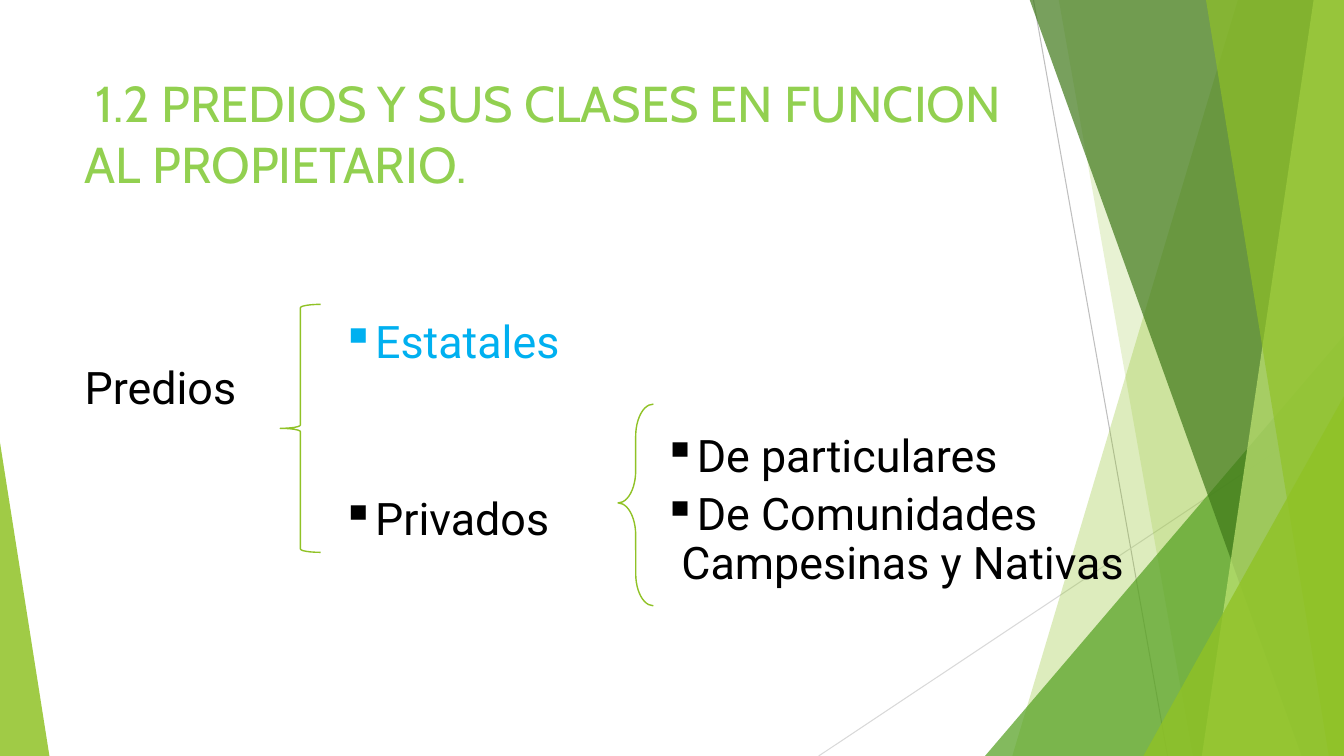
from lxml import etree
from pptx import Presentation, util as u
from pptx.dml.color import RGBColor
from pptx.enum import shapes, text
from pptx.oxml.ns import qn

PX = 9144  # EMU per px, 100 px to the inch
WIDTH, HEIGHT = 1333, 750
COLORS = {
    "lime": "90C226", "green": "54A021", "forest": "3F7819", "pale": "C0E474",
    "title": "92D050", "blue": "00B0F0", "black": "000000",
    "gray": "BFBFBF", "light_gray": "D9D9D9",
}


def px(*lengths):
    return [u.Emu(length * PX) for length in lengths]


def rgb(name):
    return RGBColor.from_string(COLORS[name])


def fill_shape(shape, color, opacity):
    shape.shadow.inherit = False
    shape.line.fill.background()
    shape.fill.solid()
    shape.fill.fore_color.rgb = rgb(color)
    color_element = shape.fill._xPr.find(qn("a:solidFill"))[0]
    etree.SubElement(color_element, qn("a:alpha"), val=str(opacity * 1000))


def add_line(slide, start, end, color):
    line = slide.shapes.add_connector(
        shapes.MSO_CONNECTOR.STRAIGHT, *px(*start), *px(*end))
    line.line.color.rgb = rgb(color)
    line.line.width = u.Pt(0.75)
    etree.SubElement(line._element.spPr, qn("a:effectLst"))


def add_band(slide, right, top_x, bottom_x, color, opacity):
    """Fill from a slanted edge to the right side, over the full height."""
    builder = slide.shapes.build_freeform(top_x, -1, scale=PX)
    builder.add_line_segments([(right, -1), (right, HEIGHT), (bottom_x, HEIGHT)])
    fill_shape(builder.convert_to_shape(), color, opacity)


def add_corner(slide, box, apex, color, opacity):
    triangle = slide.shapes.add_shape(
        shapes.MSO_SHAPE.ISOSCELES_TRIANGLE, *px(*box))
    triangle.adjustments[0] = apex
    fill_shape(triangle, color, opacity)


def add_facets(slide, box):
    left, top, width, height = box
    right, bottom = left + width, top + height

    def right_corner(corner_width, corner_height, color, opacity):
        corner = (right - corner_width, bottom - corner_height,
                  corner_width, corner_height)
        add_corner(slide, corner, 1, color, opacity)

    # Thin lines
    add_line(slide, (1025, top), (1158, bottom), "gray")
    add_line(slide, (right, 403), (812, bottom), "light_gray")
    # Overlapping facets, back to front
    add_band(slide, right, 1228, 1004, "lime", 30)
    add_band(slide, right, 1050, 1183, "lime", 20)
    right_corner(356, 417, "green", 72)
    add_band(slide, right, 1021, 1291, "forest", 70)
    add_band(slide, right, 1303, 1192, "pale", 70)
    add_band(slide, right, 1196, 1318, "lime", 65)
    right_corner(199, 357, "lime", 80)
    # Left corner
    add_corner(slide, (left, bottom - 311, 49, 311), 0, "lime", 85)


def add_text(slide, box, lines, font, size, bulleted=False):
    """Lines are (wording, colour, space before in points)."""
    frame = slide.shapes.add_textbox(*px(*box)).text_frame
    frame.word_wrap = True
    frame.vertical_anchor = text.MSO_ANCHOR.TOP
    for index, (wording, color, space) in enumerate(lines):
        paragraph = frame.paragraphs[0] if index == 0 else frame.add_paragraph()
        paragraph.space_before = u.Pt(space)
        if bulleted:
            paragraph.line_spacing = 0.9
            properties = paragraph._p.get_or_add_pPr()
            indent = 18 * PX
            properties.set("marL", str(indent))
            properties.set("indent", str(-indent))
            etree.SubElement(properties, qn("a:buChar"), char="▪")
        run = paragraph.add_run()
        run.text = wording
        run.font.name = font
        run.font.size = u.Pt(size)
        run.font.color.rgb = rgb(color)


def add_brace(slide, box, adjustments=()):
    brace = slide.shapes.add_shape(shapes.MSO_SHAPE.LEFT_BRACE, *px(*box))
    brace.shadow.inherit = False
    brace.fill.background()
    brace.line.color.rgb = rgb("lime")
    brace.line.width = u.Pt(1)
    for index, value in enumerate(adjustments):
        brace.adjustments[index] = value


def add_title(slide, box):
    title = " 1.2 PREDIOS Y SUS CLASES EN FUNCION AL PROPIETARIO."
    add_text(slide, box, [(title, "title", 0)], "Cabin", 36)


def add_classification(slide, box):
    left, top, _, _ = box
    # Root
    add_text(slide, (left, top + 50, 190, 62),
             [("Predios", "black", 0)], "Roboto", 32)
    # Owners
    add_brace(slide, (left + 204, top, 40, 246))
    add_text(slide, (left + 255, top + 10, 256, 269),
             [("Estatales", "blue", 0), ("Privados", "black", 92)],
             "Roboto", 32, bulleted=True)
    # Private owners
    add_brace(slide, (left + 539, top + 99, 35, 200), (0.91, 0.49))
    add_text(slide, (left + 574, top + 123, 552, 212),
             [("De particulares", "black", 0),
              ("De Comunidades Campesinas y Nativas", "black", 7.3)],
             "Roboto", 32, bulleted=True)


def main():
    presentation = Presentation()
    presentation.slide_width, presentation.slide_height = px(WIDTH, HEIGHT)
    slide = presentation.slides.add_slide(presentation.slide_layouts[6])
    add_facets(slide, (0, 0, WIDTH, HEIGHT))
    add_title(slide, (74, 67, 940, 144))
    add_classification(slide, (74, 302, 1126, 335))
    presentation.save("out.pptx")


if __name__ == "__main__":
    main()
